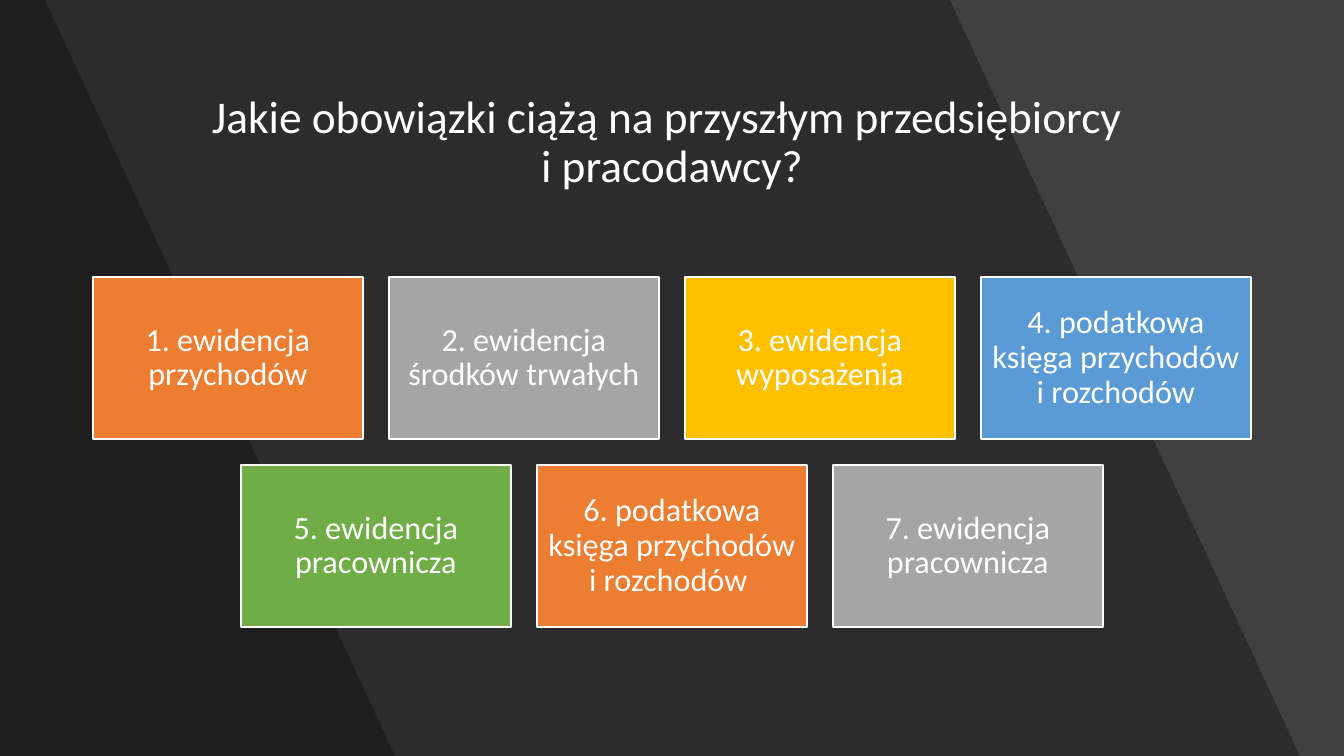
from lxml import etree
from pptx import Presentation
from pptx import util as u
from pptx.dml.color import RGBColor
from pptx.enum import shapes, text
from pptx.oxml import ns

WHITE = RGBColor(0xFF, 0xFF, 0xFF)
BLACK = RGBColor(0x00, 0x00, 0x00)
CHARCOAL = RGBColor(0x40, 0x40, 0x40)
ORANGE = RGBColor(0xED, 0x7D, 0x31)
GRAY = RGBColor(0xA5, 0xA5, 0xA5)
GOLD = RGBColor(0xFF, 0xC0, 0x00)
BLUE = RGBColor(0x5B, 0x9B, 0xD5)
GREEN = RGBColor(0x70, 0xAD, 0x47)

WIDTH, HEIGHT = 1344, 756
TILE_WIDTH, TILE_HEIGHT, GAP, TILES_TOP = 270, 162, 26, 277

ROWS = [
    [
        ("1. ewidencja przychodów", ORANGE),
        ("2. ewidencja środków trwałych", GRAY),
        ("3. ewidencja wyposażenia", GOLD),
        ("4. podatkowa księga przychodów i rozchodów", BLUE),
    ],
    [
        ("5. ewidencja pracownicza", GREEN),
        ("6. podatkowa księga przychodów i rozchodów ", ORANGE),
        ("7. ewidencja pracownicza", GRAY),
    ],
]


def px(length):
    return u.Emu(round(length * 12192000 / WIDTH))


class Painter:
    """Draws styled elements on the current slide."""

    font = "Calibri"

    def __init__(self, page):
        self.page = page

    def background(self, color):
        fill = self.page.background.fill
        fill.solid()
        fill.fore_color.rgb = color

    def shade(self, top_right, bottom_right, opacity=30):
        builder = self.page.shapes.build_freeform(0, 0, scale=px(1))
        builder.add_line_segments(
            [(top_right, 0), (bottom_right, HEIGHT), (0, HEIGHT)], close=True
        )
        band = builder.convert_to_shape()
        band.shadow.inherit = False
        band.line.fill.background()
        band.fill.solid()
        band.fill.fore_color.rgb = BLACK
        color = band.element.spPr.find(".//" + ns.qn("a:srgbClr"))
        etree.SubElement(color, ns.qn("a:alpha"), val=str(opacity * 1000))

    def caption(self, box, lines, size):
        frame = box.text_frame
        frame.word_wrap = True
        frame.vertical_anchor = text.MSO_ANCHOR.MIDDLE
        frame.margin_left = frame.margin_right = px(10)
        frame.margin_top = frame.margin_bottom = px(10)
        para = frame.paragraphs[0]
        para.alignment = text.PP_ALIGN.CENTER
        para.line_spacing = 0.9
        for index, line in enumerate(lines):
            if index:
                para.add_line_break()
            span = para.add_run()
            span.text = line
            span.font.name = self.font
            span.font.size = u.Pt(size)
            span.font.color.rgb = WHITE

    def title(self, left, top, width, height, lines):
        box = self.page.shapes.add_textbox(px(left), px(top), px(width), px(height))
        self.caption(box, lines, 32.4)

    def tile(self, left, top, label, color):
        box = self.page.shapes.add_shape(
            shapes.MSO_SHAPE.RECTANGLE,
            px(left), px(top), px(TILE_WIDTH), px(TILE_HEIGHT),
        )
        box.shadow.inherit = False
        box.fill.solid()
        box.fill.fore_color.rgb = color
        box.line.color.rgb = WHITE
        box.line.width = u.Pt(1)
        self.caption(box, [label], 23)


def main():
    deck = Presentation()
    deck.slide_width, deck.slide_height = px(WIDTH), px(HEIGHT)
    painter = Painter(deck.slides.add_slide(deck.slide_layouts[6]))
    painter.background(CHARCOAL)
    painter.shade(950, 1300)
    painter.shade(45, 395)
    painter.title(
        22, 70, 1300, 146,
        ["Jakie obowiązki ciążą na przyszłym przedsiębiorcy ", "i pracodawcy?"],
    )
    for row, tiles in enumerate(ROWS):
        row_width = len(tiles) * (TILE_WIDTH + GAP) - GAP
        left = (WIDTH - row_width) // 2
        top = TILES_TOP + row * (TILE_HEIGHT + GAP)
        for column, (label, color) in enumerate(tiles):
            painter.tile(left + column * (TILE_WIDTH + GAP), top, label, color)
    deck.save("out.pptx")


if __name__ == "__main__":
    main()
